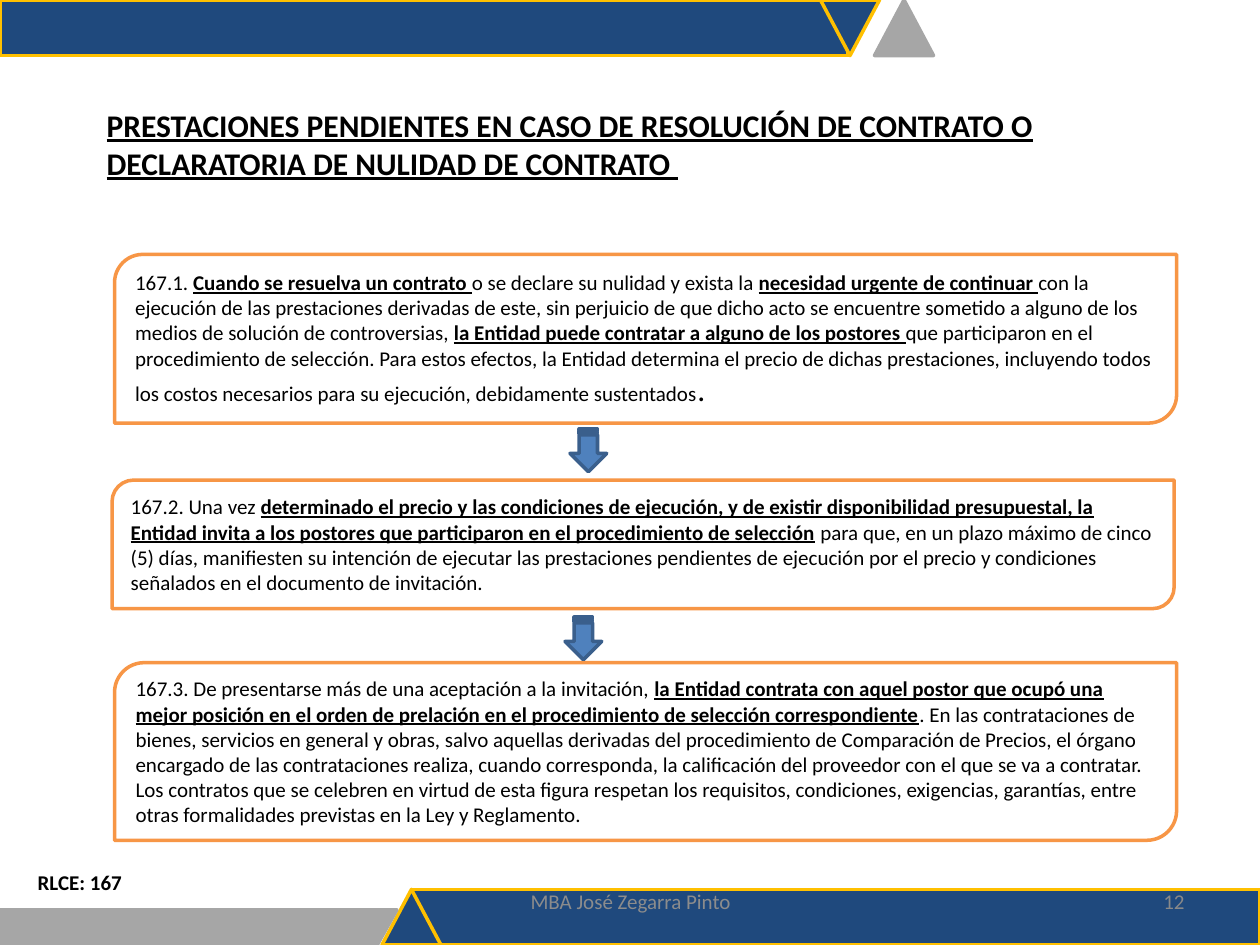
from pptx import Presentation
from pptx.dml.color import RGBColor
from pptx.enum.shapes import MSO_SHAPE as Shape
from pptx.enum.text import MSO_ANCHOR as Anchor, PP_ALIGN as Align
from pptx.util import Cm, Pt

COLORS = {
    "navy": "1F497D", "gold": "FFC000", "gray": "A6A6A6", "orange": "F79646",
    "blue": "4F81BD", "dark_blue": "3A5F8C", "white": "FFFFFF",
    "black": "000000", "footer": "8C8C8C", "number": "898989",
}

TITLE = ("PRESTACIONES PENDIENTES EN CASO DE RESOLUCIÓN DE CONTRATO O "
         "DECLARATORIA DE NULIDAD DE CONTRATO ")

ARTICLES = [
    ((2.31, 5.13, 21.41, 3.4), [
        "167.1. ",
        "Cuando se resuelva un contrato ",
        "o se declare su nulidad y exista la ",
        "necesidad urgente de continuar ",
        "con la ejecución de las prestaciones derivadas de este, sin perjuicio "
        "de que dicho acto se encuentre sometido a alguno de los medios de "
        "solución de controversias, ",
        "la Entidad puede contratar a alguno de los postores ",
        "que participaron en el procedimiento de selección. Para estos efectos, "
        "la Entidad determina el precio de dichas prestaciones, incluyendo todos "
        "los costos necesarios para su ejecución, debidamente sustentados",
    ]),
    ((2.26, 9.68, 21.41, 2.59), [
        "167.2. Una vez ",
        "determinado el precio y las condiciones de ejecución, y de existir "
        "disponibilidad presupuestal, la Entidad invita a los postores que "
        "participaron en el procedimiento de selección",
        " para que, en un plazo máximo de cinco (5) días, manifiesten su "
        "intención de ejecutar las prestaciones pendientes de ejecución por el "
        "precio y condiciones señalados en el documento de invitación.",
    ]),
    ((2.31, 13.36, 21.41, 3.58), [
        "167.3. De presentarse más de una aceptación a la invitación, ",
        "la Entidad contrata con aquel postor que ocupó una mejor posición en el "
        "orden de prelación en el procedimiento de selección correspondiente",
        ". En las contrataciones de bienes, servicios en general y obras, salvo "
        "aquellas derivadas del procedimiento de Comparación de Precios, el "
        "órgano encargado de las contrataciones realiza, cuando corresponda, la "
        "calificación del proveedor con el que se va a contratar. Los contratos "
        "que se celebren en virtud de esta figura respetan los requisitos, "
        "condiciones, exigencias, garantías, entre otras formalidades previstas "
        "en la Ley y Reglamento.",
    ]),
]


def rgb(name):
    """Return the palette colour with this name."""
    return RGBColor.from_string(COLORS[name])


def add_figure(slide, kind, box, fill, line, rotation=0):
    """Add a filled and outlined preset shape; box is in centimetres."""
    shape = slide.shapes.add_shape(kind, *map(Cm, box))
    shape.shadow.inherit = False
    shape.rotation = rotation
    shape.fill.solid()
    shape.fill.fore_color.rgb = rgb(fill)
    shape.line.color.rgb = rgb(line)
    shape.line.width = Pt(2)
    return shape


def add_run(paragraph, text, size=12, color="black", bold=False, underline=False):
    """Append formatted text to a paragraph."""
    run = paragraph.add_run()
    run.text = text
    font = run.font
    font.name, font.size = "Calibri", Pt(size)
    font.bold, font.underline = bold, underline
    font.color.rgb = rgb(color)


def add_label(slide, box, text, align=Align.LEFT, anchor=Anchor.TOP, wrap=True, **style):
    """Add a text box with a single formatted run."""
    frame = slide.shapes.add_textbox(*map(Cm, box)).text_frame
    frame.word_wrap = wrap
    frame.vertical_anchor = anchor
    frame.paragraphs[0].alignment = align
    add_run(frame.paragraphs[0], text, **style)


def add_article(slide, box, pieces):
    """Add a rounded box whose every second piece of text is emphasised."""
    shape = add_figure(slide, Shape.ROUND_2_DIAG_RECTANGLE, box, "white", "orange")
    frame = shape.text_frame
    frame.word_wrap = True
    frame.vertical_anchor = Anchor.MIDDLE
    paragraph = frame.paragraphs[0]
    paragraph.alignment = Align.LEFT
    for index, piece in enumerate(pieces):
        emphasis = index % 2 == 1
        add_run(paragraph, piece, bold=emphasis, underline=emphasis)
    return paragraph


def add_bands(slide):
    """Draw the decorative bands at the top and bottom."""
    triangle = Shape.FLOWCHART_EXTRACT
    add_figure(slide, Shape.RECTANGLE, (0, 0, 17.1, 1.12), "navy", "gold")
    add_figure(slide, triangle, (16.54, 0, 1.19, 1.12), "navy", "gold", 180)
    add_figure(slide, triangle, (17.63, 0, 1.19, 1.12), "gray", "gray")
    add_figure(slide, Shape.RECTANGLE, (8.3, 17.93, 17.1, 1.12), "navy", "gold")
    add_figure(slide, Shape.RECTANGLE, (0, 18.34, 7.59, 0.71), "gray", "gray")
    add_figure(slide, triangle, (7.7, 17.93, 1.19, 1.12), "navy", "gold")
    add_figure(slide, triangle, (7.21, 18.34, 0.79, 0.71), "gray", "gray", 180)


def main():
    """Build the slide and save it."""
    presentation = Presentation()
    presentation.slide_width, presentation.slide_height = Cm(25.4), Cm(19.05)
    slide = presentation.slides.add_slide(presentation.slide_layouts[6])
    add_bands(slide)
    add_label(slide, (8.69, 17.65, 8.05, 1.02), "MBA José Zegarra Pinto",
              align=Align.CENTER, anchor=Anchor.MIDDLE, color="footer")
    add_label(slide, (18.21, 17.65, 5.92, 1.02), "12",
              align=Align.RIGHT, anchor=Anchor.MIDDLE, color="number")
    add_label(slide, (1.9, 2.01, 21.41, 1.8), TITLE, size=18, bold=True, underline=True)
    add_label(slide, (0.51, 17.4, 2.24, 0.76), "RLCE: 167", wrap=False, bold=True)
    paragraphs = [add_article(slide, box, pieces) for box, pieces in ARTICLES]
    add_run(paragraphs[0], ".", size=18)
    for left, top in ((11.43, 8.71), (11.33, 12.5)):
        add_figure(slide, Shape.STRIPED_RIGHT_ARROW, (left, top, 0.86, 0.74),
                   "blue", "dark_blue", 90)
    presentation.save("out.pptx")


if __name__ == "__main__":
    main()
